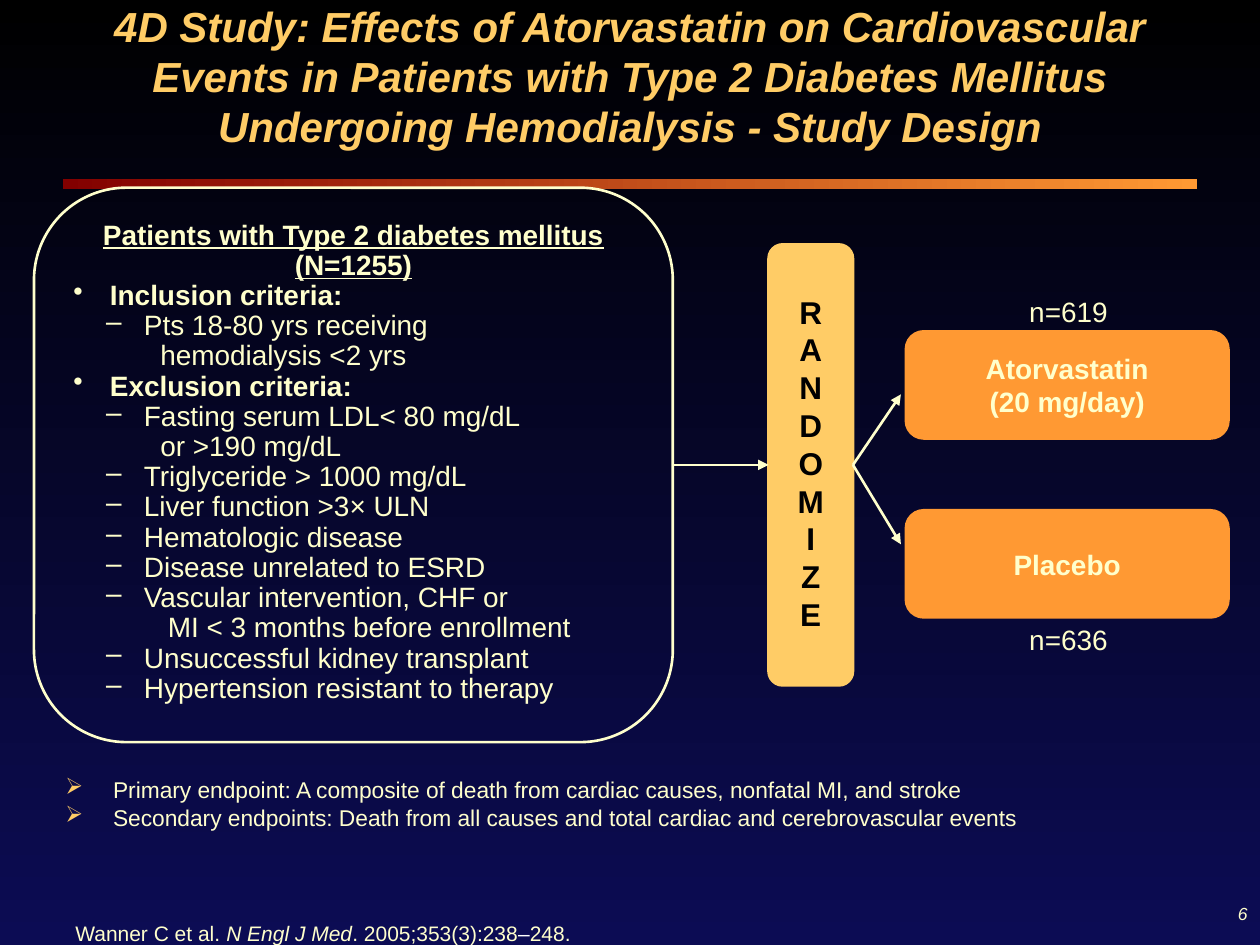
import pptx
import pptx.util
import pptx.dml.color
import pptx.enum.shapes
import pptx.enum.text
import pptx.oxml
import pptx.oxml.ns
from dataclasses import dataclass

Inches = pptx.util.Inches
Pt = pptx.util.Pt
Shape = pptx.enum.shapes.MSO_SHAPE
Align = pptx.enum.text.PP_ALIGN
Anchor = pptx.enum.text.MSO_ANCHOR


@dataclass(frozen=True)
class Theme:
    face: str = "Arial"
    cream: str = "FFFFCC"
    gold: str = "FFCC66"
    orange: str = "FF9933"
    red: str = "820000"
    black: str = "000000"
    navy: str = "0C0C54"
    white: str = "FFFFFF"
    title: int = 24
    tall: int = 18
    body: int = 16
    note: int = 13
    cite: int = 12
    page: int = 10
    line: float = 1.5


T = Theme()
LEFT, RIGHT = 1, 3  # connection sites

# Style of criteria lines: bullet, left margin, hang, bold
HEAD = ("•", 0.29, 0.29, True)
ITEM = ("–", 0.56, 0.3, False)
MORE = (None, 0.69, 0, False)
DEEP = (None, 0.75, 0, False)
RULES = [
    (HEAD, "Inclusion criteria:"),
    (ITEM, "Pts 18-80 yrs receiving"),
    (MORE, "hemodialysis <2 yrs"),
    (HEAD, "Exclusion criteria:"),
    (ITEM, "Fasting serum LDL< 80 mg/dL"),
    (MORE, "or >190 mg/dL"),
    (ITEM, "Triglyceride > 1000 mg/dL"),
    (ITEM, "Liver function >3× ULN"),
    (ITEM, "Hematologic disease"),
    (ITEM, "Disease unrelated to ESRD"),
    (ITEM, "Vascular intervention, CHF or"),
    (DEEP, "MI < 3 months before enrollment"),
    (ITEM, "Unsuccessful kidney transplant"),
    (ITEM, "Hypertension resistant to therapy"),
]
ENDS = [
    "Primary endpoint: A composite of death from cardiac causes, nonfatal MI, and stroke",
    "Secondary endpoints: Death from all causes and total cardiac and cerebrovascular events",
]


def rgb(code):
    return pptx.dml.color.RGBColor.from_string(code)


def blend(fill, start, end, angle):
    fill.gradient()
    fill.gradient_angle = angle
    for stop, code in zip(fill.gradient_stops, (start, end)):
        stop.color.rgb = rgb(code)


def node(parent, tag, **attrs):
    child = pptx.oxml.ns.qn("a:" + tag)
    item = parent.makeelement(child, attrs)
    parent.append(item)
    return item


def bullet(para, mark, left, hang, color=None):
    props = para._p.get_or_add_pPr()
    props.set("marL", str(Inches(left)))
    props.set("indent", str(-Inches(hang)))
    if color:
        node(node(props, "buClr"), "srgbClr", val=color)
    if mark:
        node(props, "buChar", char=mark)
    else:
        node(props, "buNone")


def style(para, size, color=T.cream, bold=False, italic=False, align=Align.LEFT):
    para.alignment = align
    font = para.font
    font.name, font.size = T.face, Pt(size)
    font.bold, font.italic = bold, italic
    font.color.rgb = rgb(color)


def lines(frame, texts):
    """Yield one paragraph for each text."""
    for i, text in enumerate(texts):
        para = frame.add_paragraph() if i else frame.paragraphs[0]
        para.text = text
        yield para


def label(slide, box, text, size, wrap=False, anchor=Anchor.TOP, **look):
    frame = slide.shapes.add_textbox(*map(Inches, box)).text_frame
    frame.word_wrap = wrap
    frame.vertical_anchor = anchor
    frame.paragraphs[0].text = text
    style(frame.paragraphs[0], size, **look)
    return frame


def panel(slide, box, edge, fill=None, anchor=Anchor.MIDDLE):
    shape = slide.shapes.add_shape(Shape.ROUNDED_RECTANGLE, *map(Inches, box))
    shape.shadow.inherit = False
    if fill:
        shape.fill.solid()
        shape.fill.fore_color.rgb = rgb(fill)
    else:
        shape.fill.background()
    shape.line.color.rgb = rgb(edge)
    shape.line.width = Pt(T.line)
    shape.text_frame.word_wrap = True
    shape.text_frame.vertical_anchor = anchor
    return shape


def arrow(slide, source, end, target=None):
    kind = pptx.enum.shapes.MSO_CONNECTOR.STRAIGHT
    x, y = map(Inches, end)
    link = slide.shapes.add_connector(kind, x, y, x, y)
    link.begin_connect(source, RIGHT)
    if target:
        link.end_connect(target, LEFT)
    link.line.color.rgb = rgb(T.cream)
    link.line.width = Pt(T.line)
    node(link.line._get_or_add_ln(), "tailEnd", type="triangle")
    node(link._element.spPr, "effectLst")


def criteria(slide):
    shape = panel(slide, (0.27, 1.49, 5.07, 4.4), T.cream, anchor=Anchor.TOP)
    frame = shape.text_frame
    head = frame.paragraphs[0]
    head.text = "Patients with Type 2 diabetes mellitus (N=1255)"
    style(head, T.body, bold=True, align=Align.CENTER)
    head.font.underline = True
    head.line_spacing = 0.9
    for (mark, left, hang, bold), text in RULES:
        para = frame.add_paragraph()
        para.text = text
        bullet(para, mark, left, hang)
        style(para, T.body, bold=bold)
        para.line_spacing = 0.9
    return shape


def tower(slide):
    shape = panel(slide, (6.1, 1.94, 0.67, 3.5), T.gold, T.gold, Anchor.TOP)
    shape.text_frame.margin_top = Inches(0.35)
    for para in lines(shape.text_frame, "RANDOMIZE"):
        style(para, T.tall, T.black, bold=True, align=Align.CENTER)
    return shape


def arm(slide, top, text, count, high):
    shape = panel(slide, (7.19, top, 2.56, 0.85), T.orange, T.orange)
    para = shape.text_frame.paragraphs[0]
    para.text = text
    style(para, T.body, bold=True, align=Align.CENTER)
    label(slide, (8.07, high, 0.82, 0.37), count, T.body)


def goals(slide):
    frame = slide.shapes.add_textbox(*map(Inches, (0.42, 6.13, 9.56, 0.67))).text_frame
    frame.word_wrap = True
    for i, para in enumerate(lines(frame, ENDS)):
        bullet(para, "➢", 0.38, 0.38, T.gold)
        style(para, T.note)
        para.line_spacing = 0.9
        if i:
            para.space_before = Pt(2)


def source(slide):
    para = label(slide, (0.5, 7.26, 4.13, 0.3), "", T.cite).paragraphs[0]
    parts = ["Wanner C et al. ", "N Engl J Med", ". 2005;353(3):238", "–", "248."]
    runs = [para.add_run() for _ in parts]
    for run, text in zip(runs, parts):
        run.text = text
    runs[1].font.italic = True
    runs[3].font.color.rgb = rgb(T.white)


def main():
    deck = pptx.Presentation()
    deck.slide_width, deck.slide_height = Inches(10), Inches(7.5)
    slide = deck.slides.add_slide(deck.slide_layouts[6])

    # Background, rule, page number and title
    blend(slide.background.fill, T.black, T.navy, 270)
    rule = slide.shapes.add_shape(Shape.RECTANGLE, *map(Inches, (0.5, 1.42, 9, 0.08)))
    rule.shadow.inherit = False
    rule.line.fill.background()
    blend(rule.fill, T.red, T.orange, 0)
    label(slide, (7.91, 7, 2.09, 0.5), "6", T.page, anchor=Anchor.MIDDLE,
          italic=True, align=Align.RIGHT)
    label(slide, (0.5, 0.25, 9, 1),
          "4D Study: Effects of Atorvastatin on Cardiovascular Events in Patients "
          "with Type 2 Diabetes Mellitus Undergoing Hemodialysis - Study Design",
          T.title, wrap=True, anchor=Anchor.BOTTOM, color=T.gold, bold=True,
          italic=True, align=Align.CENTER)

    # Study flow
    group = criteria(slide)
    split = tower(slide)
    arm(slide, 2.63, "Atorvastatin\v(20 mg/day)", "n=619", 2.29)
    arm(slide, 4.05, "Placebo", "n=636", 4.89)
    arrow(slide, group, (6.1, 3.69), split)
    for y in (3.13, 4.32):
        arrow(slide, split, (7.15, y))

    # Endpoints and citation
    goals(slide)
    source(slide)
    deck.save("out.pptx")


if __name__ == "__main__":
    main()
